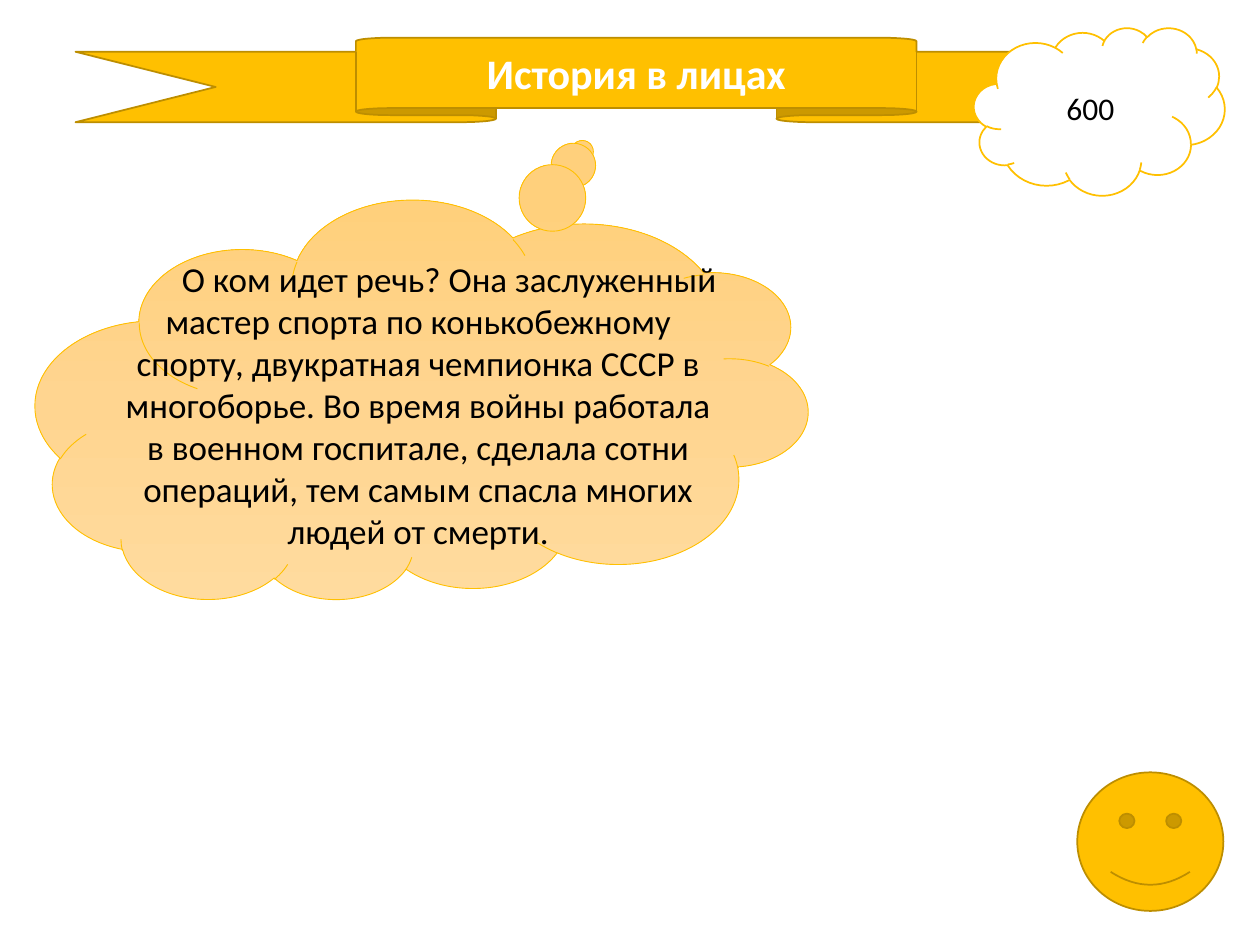
import copy
from dataclasses import dataclass
from typing import Optional

import pptx
import pptx.dml.color
import pptx.enum.shapes
import pptx.enum.text
import pptx.util

Pt = pptx.util.Pt
RGBColor = pptx.dml.color.RGBColor
Kind = pptx.enum.shapes.MSO_SHAPE

GOLD = RGBColor(0xFF, 0xC0, 0x00)
DARK_GOLD = RGBColor(0xBD, 0x8E, 0x00)
WHITE = RGBColor(0xFF, 0xFF, 0xFF)
BLACK = RGBColor(0x00, 0x00, 0x00)
BUBBLE_STOPS = [
    (0, RGBColor(0xFF, 0xDB, 0x9E)),
    (0.5, RGBColor(0xFF, 0xD5, 0x90)),
    (1, RGBColor(0xFF, 0xD0, 0x7C)),
]

QUESTION = (
    "О ком идет речь? Она заслуженный мастер спорта по конькобежному спорту, "
    "двукратная чемпионка СССР в многоборье. Во время войны работала в военном "
    "госпитале, сделала сотни операций, тем самым спасла многих людей от смерти."
)


@dataclass
class Label:
    text: str
    size: float
    color: RGBColor
    bold: bool = False


@dataclass
class Figure:
    kind: Kind
    left: float
    top: float
    width: float
    height: float
    line: RGBColor
    line_width: float = 1
    fill: Optional[RGBColor] = None  # None means the bubble gradient
    label: Optional[Label] = None
    flipped: bool = False


FIGURES = [
    Figure(Kind.UP_RIBBON, 43.2, 21.6, 640.8, 48.24, DARK_GOLD, fill=GOLD,
           label=Label("История в лицах", 24, WHITE, True)),
    Figure(Kind.CLOUD, 556.56, 15.84, 143.28, 95.76, GOLD, fill=WHITE,
           label=Label("600", 18, BLACK)),
    Figure(Kind.CLOUD_CALLOUT, 20.16, 115.2, 441.36, 228.24, GOLD, 0.5, flipped=True),
    Figure(Kind.SMILEY_FACE, 615.6, 441.36, 83.52, 79.2, DARK_GOLD, fill=GOLD),
]


def write_label(box, label: Label):
    frame = box.text_frame
    frame.word_wrap = True
    frame.vertical_anchor = pptx.enum.text.MSO_ANCHOR.MIDDLE
    para = frame.paragraphs[0]
    para.alignment = pptx.enum.text.PP_ALIGN.CENTER
    span = para.add_run()
    span.text = label.text
    formats = {"name": "Calibri", "size": Pt(label.size), "bold": label.bold}
    for name, value in formats.items():
        setattr(span.font, name, value)
    span.font.color.rgb = label.color
    return para


def fill_gradient(fill) -> None:
    fill.gradient()
    fill.gradient_angle = 270  # counter-clockwise: runs from top to bottom
    first = fill.gradient_stops[0]._gs
    first.addnext(copy.deepcopy(first))
    for stop, (position, color) in zip(fill.gradient_stops, BUBBLE_STOPS):
        stop.position = position
        stop.color.rgb = color


def draw_figure(page, figure: Figure) -> None:
    shape = page.shapes.add_shape(
        figure.kind, Pt(figure.left), Pt(figure.top), Pt(figure.width), Pt(figure.height))
    shape.shadow.inherit = False
    if figure.fill is None:
        fill_gradient(shape.fill)
    else:
        shape.fill.solid()
        shape.fill.fore_color.rgb = figure.fill
    shape.line.color.rgb = figure.line
    shape.line.width = Pt(figure.line_width)
    if figure.flipped:
        for side in ("flipH", "flipV"):
            shape._element.spPr.xfrm.set(side, "1")
    if figure.label:
        write_label(shape, figure.label)


def main() -> None:
    deck = pptx.Presentation()
    deck.slide_width, deck.slide_height = Pt(720), Pt(540)
    page = deck.slides.add_slide(deck.slide_layouts[6])

    # Title ribbon, score cloud, thought bubble and smiley
    for figure in FIGURES:
        draw_figure(page, figure)

    # Question over the thought bubble
    box = page.shapes.add_textbox(Pt(61.2), Pt(142.56), Pt(355.68), Pt(177.12))
    para = write_label(box, Label(QUESTION, 20, BLACK))
    para._p.get_or_add_pPr().set("indent", str(Pt(35.4)))
    box.text_frame.auto_size = pptx.enum.text.MSO_AUTO_SIZE.SHAPE_TO_FIT_TEXT

    deck.save("out.pptx")


if __name__ == "__main__":
    main()
